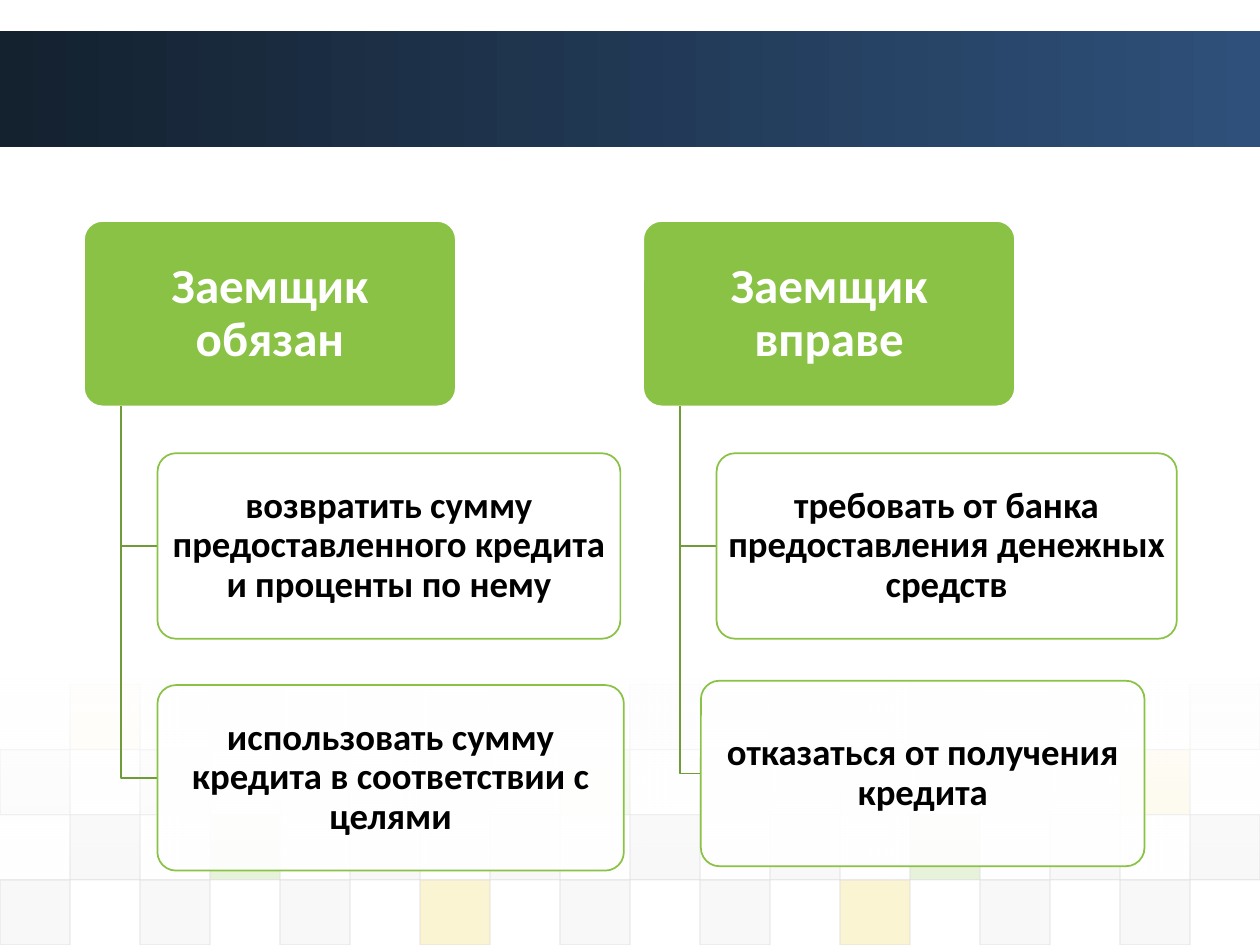
from lxml.etree import SubElement
from pptx import Presentation
from pptx.dml.color import RGBColor
from pptx.enum.shapes import MSO_SHAPE
from pptx.enum.text import MSO_ANCHOR, PP_ALIGN
from pptx.oxml.ns import qn
from pptx.util import Pt


class Theme:
    font = "Calibri"
    head_size, card_size = Pt(28), Pt(21)
    white, black = RGBColor(255, 255, 255), RGBColor(0, 0, 0)
    band_dark, band_light = RGBColor(0x14, 0x21, 0x2F), RGBColor(0x2E, 0x50, 0x7A)
    green, branch = RGBColor(0x8A, 0xC2, 0x46), RGBColor(0x6F, 0x9B, 0x38)
    yellow = RGBColor(0xEF, 0xC8, 0x21)
    gray, pale = RGBColor(0xDD, 0xDD, 0xDD), RGBColor(0xEA, 0xEA, 0xEA)


deck = Presentation()
deck.slide_width, deck.slide_height = Pt(720), Pt(540)
page = deck.slides.add_slide(deck.slide_layouts[6])


def add_box(kind, place, fills, line=None, line_width=1, opacity=(), angle=0):
    """Add a shape with one fill colour or two gradient colours.

    Opacity percentages apply to the fill colours first, then to the line.
    """
    box = page.shapes.add_shape(kind, *[Pt(length) for length in place])
    box.shadow.inherit = False
    if len(fills) == 1:
        box.fill.solid()
        box.fill.fore_color.rgb = fills[0]
    else:
        box.fill.gradient()
        box.fill.gradient_angle = angle
        for stop, color in zip(box.fill.gradient_stops, fills):
            stop.color.rgb = color
    if line is None:
        box.line.fill.background()
    else:
        box.line.color.rgb = line
        box.line.width = Pt(line_width)
    colors = list(box._element.spPr.iter(qn("a:srgbClr")))
    for color, percent in zip(colors, opacity):
        SubElement(color, qn("a:alpha")).set("val", str(percent * 1000))
    return box


def add_card(place, text, fill, line, size, color, insets, opacity=()):
    box = add_box(MSO_SHAPE.ROUNDED_RECTANGLE, place, [fill], line, opacity=opacity)
    box.adjustments[0] = 0.1
    frame = box.text_frame
    frame.word_wrap = True
    frame.vertical_anchor = MSO_ANCHOR.MIDDLE
    frame.margin_left = frame.margin_right = Pt(insets[0])
    frame.margin_top = frame.margin_bottom = Pt(insets[1])
    para = frame.paragraphs[0]
    para.text = text
    para.alignment = PP_ALIGN.CENTER
    para.line_spacing = 0.9
    para.font.name = Theme.font
    para.font.size = size
    para.font.bold = True
    para.font.color.rgb = color


# Title band
add_box(MSO_SHAPE.RECTANGLE, (0, 18, 720, 66), [Theme.band_dark, Theme.band_light])

# Checkerboard: first column, fill opacity and the colours of every second tile
tile_colors = {"D": Theme.gray, "E": Theme.pale, "G": Theme.green, "Y": Theme.yellow}
tile_width, tile_height = 40, 37.2
mosaic = [
    (1, 5, "YEEYDYEGE"),
    (0, 10, "DDDDGDDDY"),
    (1, 20, "DGDDDDGDD"),
    (0, 20, "DDDYDDYDD"),
]
for row, (first, opacity, tiles) in enumerate(mosaic):
    top = 540 - (len(mosaic) - row) * tile_height
    for index, letter in enumerate(tiles):
        left = (first + 2 * index) * tile_width
        add_box(MSO_SHAPE.RECTANGLE, (left, top, tile_width, tile_height),
                [tile_colors[letter]], Theme.gray, 0.75, (opacity, 60))

# White veil that fades out towards the bottom
add_box(MSO_SHAPE.RECTANGLE, (0, 386.5, 720, 116.5), [Theme.white, Theme.white],
        opacity=(90, 0), angle=270)

# Two trees: left edge and heading, then left, top, width and text of each card
trees = [
    (48, "Заемщик обязан", [
        (90, 259, 264.5, "возвратить сумму предоставленного кредита и проценты по нему"),
        (90, 391.5, 266.5, "использовать сумму кредита в соответствии с целями"),
    ]),
    (367.5, "Заемщик вправе", [
        (409.5, 259, 263, "требовать от банка предоставления денежных средств"),
        (400.5, 389, 253.5, "отказаться от получения кредита"),
    ]),
]
head_top, head_width, card_height = 126.25, 212.5, 106
for head_left, heading, cards in trees:
    add_card((head_left, head_top, head_width, card_height), heading, Theme.green,
             Theme.white, Theme.head_size, Theme.white, (4, 3))
    trunk, start = head_left + 21.25, head_top + card_height
    for left, top, width, text in cards:
        middle = top + card_height / 2
        builder = page.shapes.build_freeform(Pt(trunk), Pt(start))
        builder.add_line_segments(
            [(Pt(trunk), Pt(middle)), (Pt(left), Pt(middle))], close=False)
        elbow = builder.convert_to_shape()
        elbow.shadow.inherit = False
        elbow.fill.background()
        elbow.line.color.rgb = Theme.branch
        elbow.line.width = Pt(1)
        add_card((left, top, width, card_height), text, Theme.white, Theme.green,
                 Theme.card_size, Theme.black, (2.5, 2), (90,))

deck.save("out.pptx")
